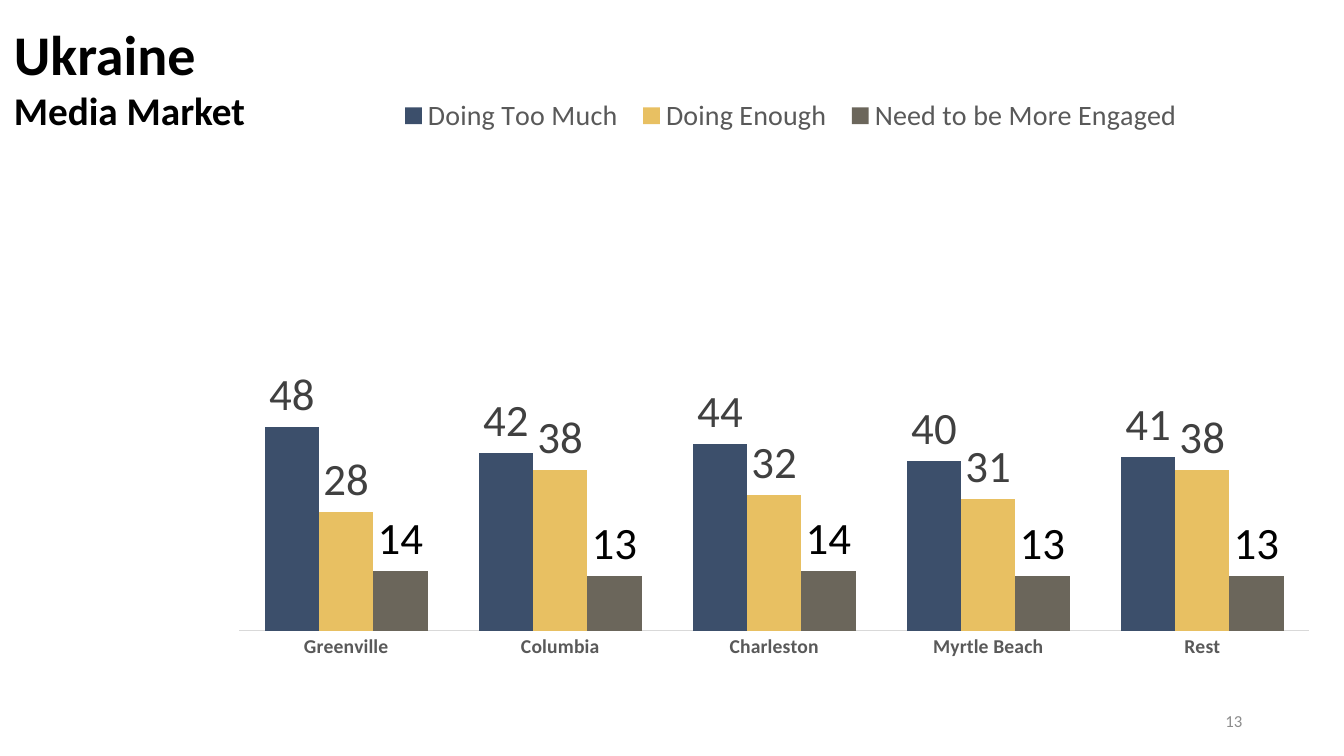
from lxml.etree import SubElement
from pptx import Presentation
from pptx.chart.data import CategoryChartData
from pptx.dml.color import RGBColor
from pptx.enum.chart import XL_CHART_TYPE, XL_LABEL_POSITION, XL_LEGEND_POSITION, XL_TICK_MARK
from pptx.enum.text import MSO_ANCHOR, PP_ALIGN
from pptx.oxml.ns import qn
from pptx.util import Emu, Pt

COLORS = {
    "black": "000000", "dark": "404040", "mid": "595959", "pale": "8C8C8C",
    "rule": "D9D9D9", "navy": "3C4F6B", "gold": "E8C062", "stone": "6B665B",
}
MARKETS = ["Greenville", "Columbia", "Charleston", "Myrtle Beach", "Rest"]
SERIES = [
    ("Doing Too Much", [48, 42, 44, 40, 41], "navy", "dark"),
    ("Doing Enough", [28, 38, 32, 31, 38], "gold", "dark"),
    ("Need to be More Engaged", [14, 13, 14, 13, 13], "stone", "black"),
]


class Deck:
    """Hold the style and the current slide, and draw each kind of element."""

    FACE = "Calibri"
    SCALE = 9144

    def __init__(self, width, height):
        self.prs = Presentation()
        self.prs.slide_width, self.prs.slide_height = self.box(width, height)
        self.slide = self.prs.slides.add_slide(self.prs.slide_layouts[6])

    def box(self, *px):
        return [Emu(n * self.SCALE) for n in px]

    def color(self, name):
        return RGBColor.from_string(COLORS[name])

    def style(self, font, size, color, bold=False):
        font.name, font.size, font.bold = self.FACE, Pt(size), bold
        font.color.rgb = self.color(color)

    def text(self, place, lines, color, bold=False,
             align=PP_ALIGN.LEFT, anchor=MSO_ANCHOR.TOP):
        frame = self.slide.shapes.add_textbox(*self.box(*place)).text_frame
        frame.word_wrap = True
        frame.vertical_anchor = anchor
        for i, (words, size) in enumerate(lines):
            para = frame.add_paragraph() if i else frame.paragraphs[0]
            para.alignment = align
            run = para.add_run()
            run.text = words
            self.style(run.font, size, color, bold)

    def layout(self, node, index, area, inner=False):
        for old in node.findall(qn("c:layout")):
            node.remove(old)
        outer = SubElement(node, qn("c:layout"))
        node.insert(index, outer)
        manual = SubElement(outer, qn("c:manualLayout"))
        parts = [("layoutTarget", "inner")] if inner else []
        parts += [("xMode", "edge"), ("yMode", "edge")]
        parts += zip("xywh", area)
        for tag, value in parts:
            SubElement(manual, qn(f"c:{tag}")).set("val", str(value))

    def columns(self, place, cats, series, plot_area, key_area):
        data = CategoryChartData()
        data.categories = cats
        for name, values, _, _ in series:
            data.add_series(name, values)
        chart = self.slide.shapes.add_chart(
            XL_CHART_TYPE.COLUMN_CLUSTERED, *self.box(*place), data).chart
        self.style(chart.font, 10, "black")
        chart.has_title = False

        chart.has_legend = True
        key = chart.legend
        key.position = XL_LEGEND_POSITION.TOP
        key.include_in_layout = False
        self.style(key.font, 20, "mid")
        self.layout(key._element, 1, key_area)

        axis = chart.category_axis
        axis.major_tick_mark = axis.minor_tick_mark = XL_TICK_MARK.NONE
        self.style(axis.tick_labels.font, 14, "mid", True)
        axis.format.line.color.rgb = self.color("rule")
        axis.format.line.width = Pt(0.75)
        scale = chart.value_axis
        scale.minimum_scale, scale.maximum_scale = 0, 100
        scale.has_major_gridlines = False
        scale.visible = False

        plot = chart.plots[0]
        plot.gap_width, plot.overlap = 95, 0
        plot.vary_by_categories = False
        for bars, (_, _, fill, ink) in zip(plot.series, series):
            bars.format.fill.solid()
            bars.format.fill.fore_color.rgb = self.color(fill)
            labels = bars.data_labels
            labels.show_value = True
            labels.position = XL_LABEL_POSITION.OUTSIDE_END
            self.style(labels.font, 32, ink)
        self.layout(plot._element.getparent(), 0, plot_area, inner=True)


def main():
    deck = Deck(1333, 750)
    deck.columns((222, 53, 1092, 618), MARKETS, SERIES,
                 (0.014, 0.247, 0.972, 0.68), (0.15, 0.06, 0.73, 0.08))
    deck.text((4, 14, 826, 192), [("Ukraine", 40), ("Media Market", 28)],
              "black", bold=True)
    deck.text((942, 695, 300, 40), [("13", 12)], "pale",
              align=PP_ALIGN.RIGHT, anchor=MSO_ANCHOR.MIDDLE)
    deck.prs.save("out.pptx")


if __name__ == "__main__":
    main()
